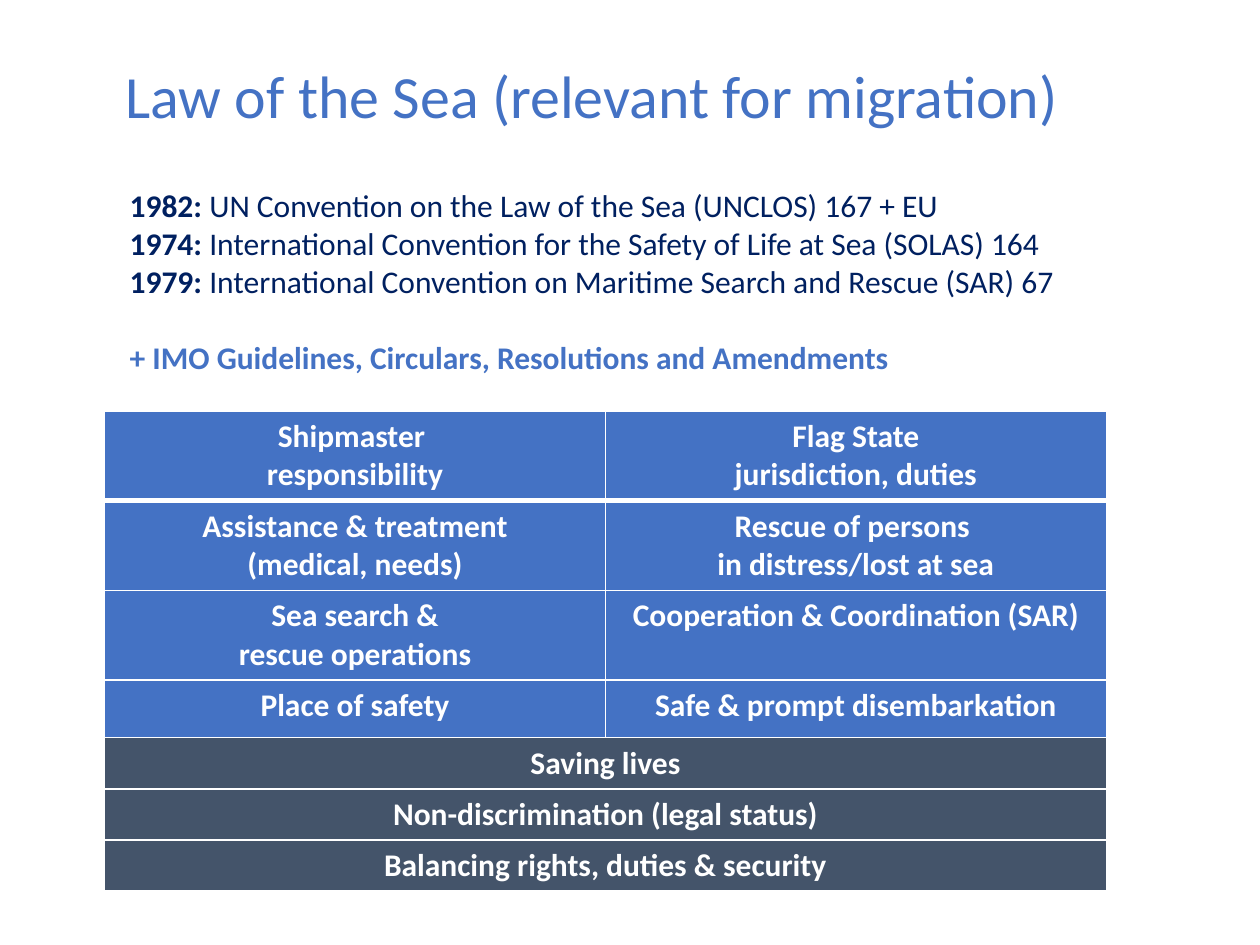
from dataclasses import dataclass

import pptx
import pptx.dml.color
import pptx.enum.text
import pptx.oxml
import pptx.oxml.ns
import pptx.util
from pptx.util import Pt

RGBColor = pptx.dml.color.RGBColor
BLUE = RGBColor(0x44, 0x72, 0xC4)
NAVY = RGBColor(0x00, 0x20, 0x60)
SLATE = RGBColor(0x44, 0x54, 0x6A)
WHITE = RGBColor(0xFF, 0xFF, 0xFF)
FONT_NAME = "Calibri"
CENTER = pptx.enum.text.PP_ALIGN.CENTER
MIDDLE = pptx.enum.text.MSO_ANCHOR.MIDDLE
BOTTOM = pptx.enum.text.MSO_ANCHOR.BOTTOM
FIXED = pptx.enum.text.MSO_AUTO_SIZE.NONE
TABLE_WIDTH = 572.4


@dataclass(frozen=True)
class Convention:
    year: str
    name: str


@dataclass(frozen=True)
class TopicRow:
    height: float
    topics: tuple[str, ...]
    fill: RGBColor = BLUE
    bottom_border: float = 1


CONVENTIONS = (
    Convention("1982: ", "UN Convention on the Law of the Sea (UNCLOS) 167 + EU"),
    Convention("1974: ", "International Convention for the Safety of Life at Sea (SOLAS) 164"),
    Convention("1979: ", "International Convention on Maritime Search and Rescue (SAR) 67"),
)
GUIDELINES = "+ IMO Guidelines, Circulars, Resolutions and Amendments"
TOPIC_ROWS = (
    TopicRow(50.5, ("Shipmaster \vresponsibility", "Flag State\vjurisdiction, duties"), bottom_border=3),
    TopicRow(51, ("Assistance & treatment\v(medical, needs)", "Rescue of persons \vin distress/lost at sea")),
    TopicRow(51, ("Sea search &\nrescue operations", "Cooperation & Coordination (SAR)")),
    TopicRow(33.1, ("Place of safety", "Safe & prompt disembarkation")),
    TopicRow(29.1, ("Saving lives",), SLATE),
    TopicRow(29.1, ("Non-discrimination (legal status)",), SLATE),
    TopicRow(29.1, ("Balancing rights, duties & security",), SLATE),
)


def apply_format(target, values: dict) -> None:
    for name, value in values.items():
        setattr(target, name, value)


def format_font(font, color: RGBColor, size: float = 18, bold: bool = False) -> None:
    apply_format(font, {"name": FONT_NAME, "size": Pt(size), "bold": bold})
    font.color.rgb = color


def add_run(paragraph, text: str, color: RGBColor, bold: bool) -> None:
    run = paragraph.add_run()
    run.text = text
    format_font(run.font, color, bold=bold)


def place_title(slide) -> None:
    title = slide.shapes.title
    apply_format(title, {"left": Pt(51.8), "top": Pt(28.8), "width": Pt(572.4), "height": Pt(50.4)})
    apply_format(title.text_frame, {
        "text": "Law of the Sea (relevant for migration)",
        "word_wrap": True, "auto_size": FIXED, "vertical_anchor": MIDDLE,
    })
    paragraph = title.text_frame.paragraphs[0]
    paragraph.alignment = CENTER
    format_font(paragraph.runs[0].font, BLUE, 34.2)


def add_conventions(slide, conventions: tuple[Convention, ...]) -> None:
    shape = slide.shapes.add_textbox(Pt(67), Pt(96.5), Pt(565.2), Pt(121.7))
    frame = shape.text_frame
    apply_format(frame, {"word_wrap": True, "auto_size": FIXED, "vertical_anchor": BOTTOM})
    for index, convention in enumerate(conventions):
        paragraph = frame.add_paragraph() if index else frame.paragraphs[0]
        add_run(paragraph, convention.year, NAVY, True)
        add_run(paragraph, convention.name, NAVY, False)
    paragraph = frame.add_paragraph()
    paragraph.space_before = Pt(22)
    add_run(paragraph, GUIDELINES, BLUE, True)


def set_borders(cell, widths: dict[str, float]) -> None:
    properties = cell._tc.get_or_add_tcPr()
    for index, (side, width) in enumerate(widths.items()):
        line = pptx.oxml.parse_xml(
            f'<a:{side} {pptx.oxml.ns.nsdecls("a")} w="{Pt(width)}">'
            f'<a:solidFill><a:srgbClr val="{WHITE}"/></a:solidFill></a:{side}>'
        )
        properties.insert(index, line)


def fill_cell(cell, text: str, fill: RGBColor) -> None:
    cell.text_frame.text = text
    for paragraph in cell.text_frame.paragraphs:
        paragraph.alignment = CENTER
        for run in paragraph.runs:
            format_font(run.font, WHITE, bold=True)
    cell.fill.solid()
    cell.fill.fore_color.rgb = fill


def add_topic_table(slide, rows: tuple[TopicRow, ...]) -> None:
    height = sum(row.height for row in rows)
    column_count = max(len(row.topics) for row in rows)
    table = slide.shapes.add_table(
        len(rows), column_count, Pt(59.8), Pt(235), Pt(TABLE_WIDTH), Pt(height)
    ).table
    for column in table.columns:
        column.width = Pt(TABLE_WIDTH / column_count)
    top_border = 1
    for row_index, row in enumerate(rows):
        table.rows[row_index].height = Pt(row.height)
        if len(row.topics) == 1:
            table.cell(row_index, 0).merge(table.cell(row_index, column_count - 1))
        for column_index, topic in enumerate(row.topics):
            fill_cell(table.cell(row_index, column_index), topic, row.fill)
        for cell in table.rows[row_index].cells:
            set_borders(cell, {"lnL": 1, "lnR": 1, "lnT": top_border, "lnB": row.bottom_border})
        top_border = row.bottom_border


def main() -> None:
    presentation = pptx.Presentation()
    apply_format(presentation, {"slide_width": Pt(720), "slide_height": Pt(540)})
    slide = presentation.slides.add_slide(presentation.slide_layouts[5])
    place_title(slide)
    add_conventions(slide, CONVENTIONS)
    add_topic_table(slide, TOPIC_ROWS)
    presentation.save("out.pptx")


if __name__ == "__main__":
    main()
